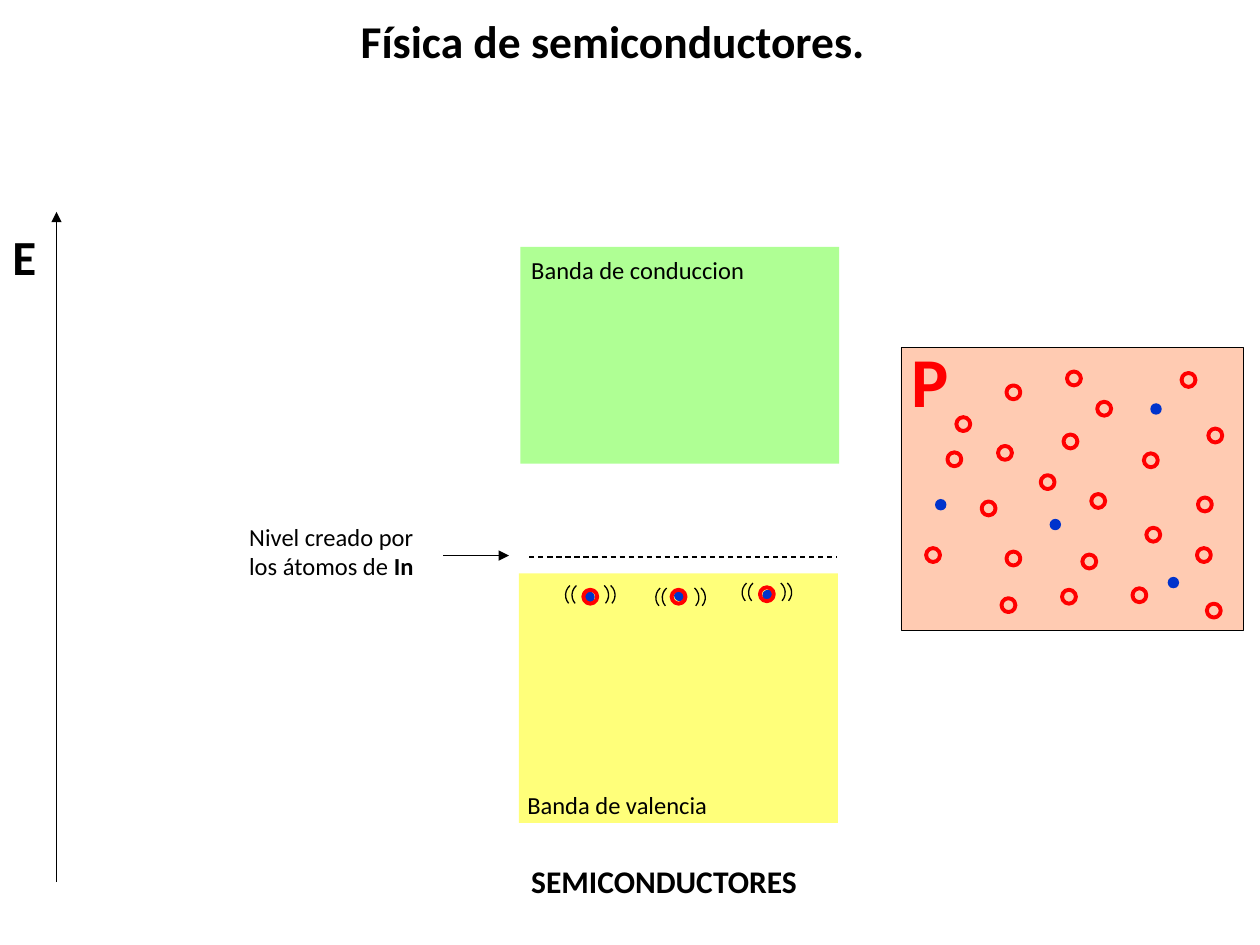
import dataclasses

import lxml.etree
import pptx
import pptx.dml.color
import pptx.enum.dml
import pptx.enum.shapes
import pptx.enum.text
import pptx.oxml.ns
import pptx.util

Cm = pptx.util.Cm
Color = pptx.dml.color.RGBColor
Shape = pptx.enum.shapes.MSO_SHAPE
Align = pptx.enum.text.PP_ALIGN
qn = pptx.oxml.ns.qn

BLACK = Color(0, 0, 0)
RED = Color(255, 0, 0)
BLUE = Color(0, 51, 204)
GREEN = Color(102, 255, 51)
YELLOW = Color(255, 255, 0)
ORANGE = Color(255, 153, 102)
FONT = "Calibri"
RING = 0.28
DOT = 0.23
WAVE = 0.51

HOLES = [
    (2.13, 0.76), (0.94, 2.11), (5.66, 0.51), (3.28, 1.75), (1.96, 1.98),
    (4.95, 3.63), (3.66, 4.17), (4.9, 2.13), (5.99, 3.02), (6.17, 5.16),
    (0.51, 4.04), (1.63, 3.1), (3.96, 1.09), (4.67, 4.85), (6.2, 1.63),
    (2.03, 5.05), (2.13, 4.11), (2.82, 2.57), (3.84, 2.95), (1.12, 1.4),
    (3.25, 4.88), (3.35, 0.48), (5.97, 4.04),
]
ELECTRONS = [(3, 3.45), (0.69, 3.05), (5.03, 1.12), (5.38, 4.62)]


@dataclasses.dataclass
class Box:
    left: float
    top: float
    width: float
    height: float

    def inner(self, left, top, width, height):
        return Box(self.left + left, self.top + top, width, height)

    def lengths(self):
        return [Cm(n) for n in (self.left, self.top, self.width, self.height)]


def write_text(holder, text, size=14, bold=False, color=BLACK, align=Align.LEFT, bold_end=""):
    frame = holder.text_frame
    frame.word_wrap = False
    frame.auto_size = pptx.enum.text.MSO_AUTO_SIZE.NONE
    frame.vertical_anchor = pptx.enum.text.MSO_ANCHOR.TOP
    lines = text.split("\n")
    for index, line in enumerate(lines):
        para = frame.paragraphs[0] if index == 0 else frame.add_paragraph()
        para.alignment = align
        spans = [(line, bold)]
        if bold_end and index == len(lines) - 1:
            spans.append((bold_end, True))
        for words, heavy in spans:
            span = para.add_run()
            span.text = words
            span.font.name = FONT
            span.font.size = pptx.util.Pt(size)
            span.font.bold = heavy
            span.font.color.rgb = color


def add_label(page, box, text, **look):
    write_text(page.shapes.add_textbox(*box.lengths()), text, **look)


def add_figure(page, kind, box, fill=None, opacity=100, line=None, weight=0.75):
    figure = page.shapes.add_shape(kind, *box.lengths())
    figure.shadow.inherit = False
    if fill is None:
        figure.fill.background()
    else:
        figure.fill.solid()
        figure.fill.fore_color.rgb = fill
        if opacity < 100:
            tint = figure._element.spPr.find(qn("a:solidFill"))[0]
            lxml.etree.SubElement(tint, qn("a:alpha"), val=str(opacity * 1000))
    if line is None:
        figure.line.fill.background()
    else:
        figure.line.color.rgb = line
        figure.line.width = pptx.util.Pt(weight)
    return figure


def add_line(page, start, end, arrow=False, dashed=False):
    line = page.shapes.add_connector(
        pptx.enum.shapes.MSO_CONNECTOR.STRAIGHT, *[Cm(n) for n in start + end])
    line.line.color.rgb = BLACK
    line.line.width = pptx.util.Pt(0.75)
    if dashed:
        line.line.dash_style = pptx.enum.dml.MSO_LINE.DASH
    if arrow:
        lxml.etree.SubElement(line.line._get_or_add_ln(), qn("a:tailEnd"), type="triangle")
    lxml.etree.SubElement(line._element.spPr, qn("a:effectLst"))


def add_hole(page, box):
    add_figure(page, Shape.OVAL, box, line=RED, weight=2.25)


def add_electron(page, box):
    add_figure(page, Shape.OVAL, box, fill=BLUE)


def add_title(page, box):
    title = page.shapes.title
    title.left, title.top, title.width, title.height = box.lengths()
    write_text(title, "Física de semiconductores.", size=26, bold=True, align=Align.CENTER)


def add_energy_axis(page, box):
    right = box.left + box.width
    add_line(page, (right, box.top + box.height), (right, box.top), arrow=True)
    add_label(page, box.inner(0, 0.18, 0.99, 1.45), "E", size=28, bold=True)


def add_conduction_band(page, box):
    add_figure(page, Shape.RECTANGLE, box, fill=GREEN, opacity=52)
    add_label(page, box.inner(-0.03, 0.03, 4.85, 0.86), "Banda de conduccion")


def add_vibrating_atom(page, box, dot_shift, wave_shift):
    add_electron(page, box.inner(*dot_shift, DOT, DOT))
    add_hole(page, box)
    across, down = wave_shift
    for offset, mirrored in ((-0.23, False), (-0.36, False), (0, True), (0.13, True)):
        wave = add_figure(page, Shape.ARC, box.inner(offset + across, down, WAVE, WAVE), line=BLACK)
        wave.rotation = 130.8 if mirrored else 229.2
        if mirrored:
            wave._element.spPr.get_or_add_xfrm().set("flipH", "1")


def add_valence_band(page, box):
    add_figure(page, Shape.RECTANGLE, box, fill=YELLOW, opacity=52)
    add_label(page, box.inner(-0.08, 4.24, 4.19, 0.86), "Banda de valencia")
    atoms = [
        (0.33, (0, 0.03), (0, -0.15)),
        (0.33, (0.05, 0), (0.04, -0.1)),
        (0.28, (0.05, 0.05), (0, -0.15)),
    ]
    for index, (top, dot_shift, wave_shift) in enumerate(atoms):
        atom = box.inner(1.3 + index * 1.78, top, RING, RING)
        add_vibrating_atom(page, atom, dot_shift, wave_shift)


def add_indium_level(page, box):
    add_label(page, box.inner(0, 0, 3.86, 1.45), "Nivel creado por\nlos átomos de ",
              bold_end="In", align=Align.CENTER)
    arrow_y, level_y = box.top + 0.81, box.top + 0.84
    add_line(page, (box.left + 4.19, arrow_y), (box.left + 5.51, arrow_y), arrow=True)
    add_line(page, (box.left + 5.92, level_y), (box.left + box.width, level_y), dashed=True)


def add_p_type_crystal(page, box):
    add_figure(page, Shape.RECTANGLE, box, fill=ORANGE, opacity=50, line=BLACK, weight=0.25)
    add_label(page, box.inner(-0.03, -0.33, 1.27, 1.96), "P", size=40, bold=True, color=RED)
    for left, top in HOLES:
        add_hole(page, box.inner(left, top, RING, RING))
    for left, top in ELECTRONS:
        add_electron(page, box.inner(left, top, DOT, DOT))


def main():
    deck = pptx.Presentation()
    deck.slide_width, deck.slide_height = Cm(25.4), Cm(19.05)
    page = deck.slides.add_slide(deck.slide_layouts[5])
    add_title(page, Box(6.96, 0.13, 10.8, 1.37))
    add_energy_axis(page, Box(0, 4.27, 1.14, 13.51))
    add_conduction_band(page, Box(10.49, 4.98, 6.43, 4.37))
    add_valence_band(page, Box(10.46, 11.56, 6.43, 5.03))
    add_indium_level(page, Box(4.75, 10.39, 12.12, 1.45))
    add_label(page, Box(10.46, 17.25, 5.92, 1.02), "SEMICONDUCTORES", size=18, bold=True)
    add_p_type_crystal(page, Box(18.16, 7.01, 6.91, 5.69))
    deck.save("out.pptx")


if __name__ == "__main__":
    main()
